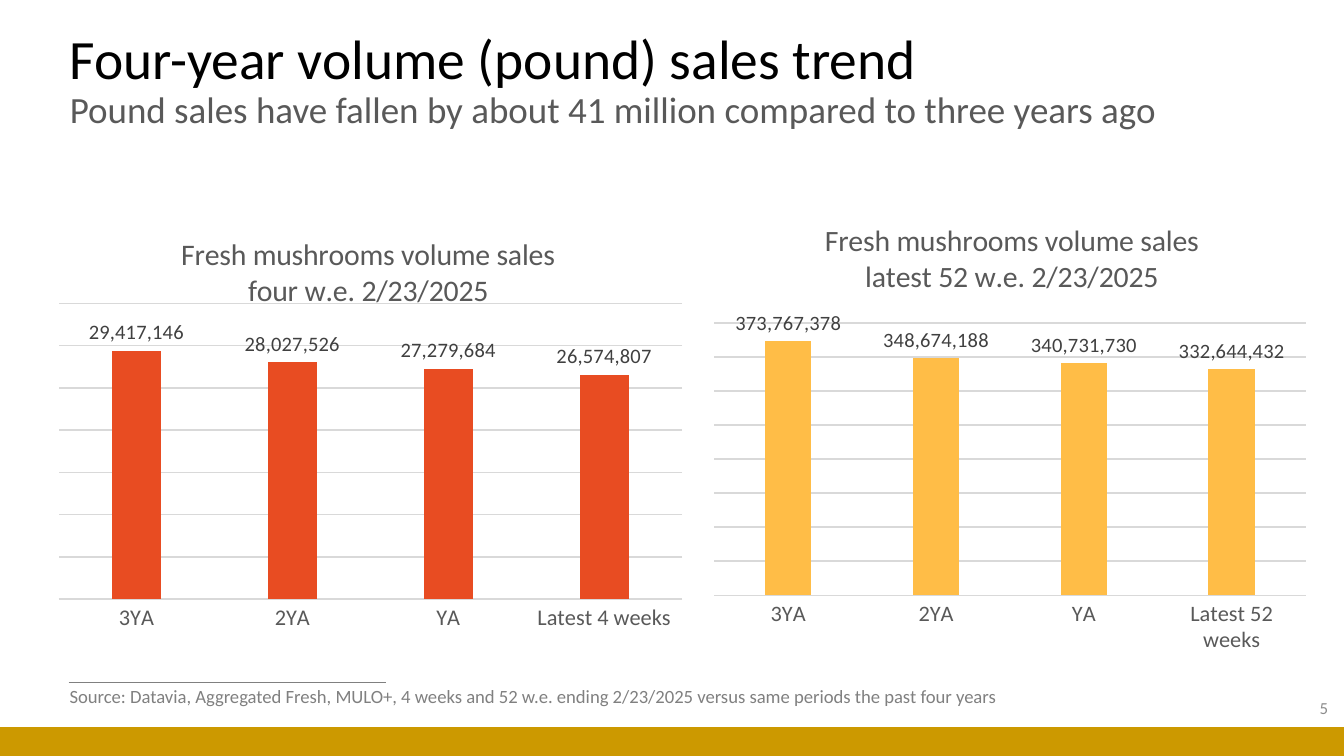
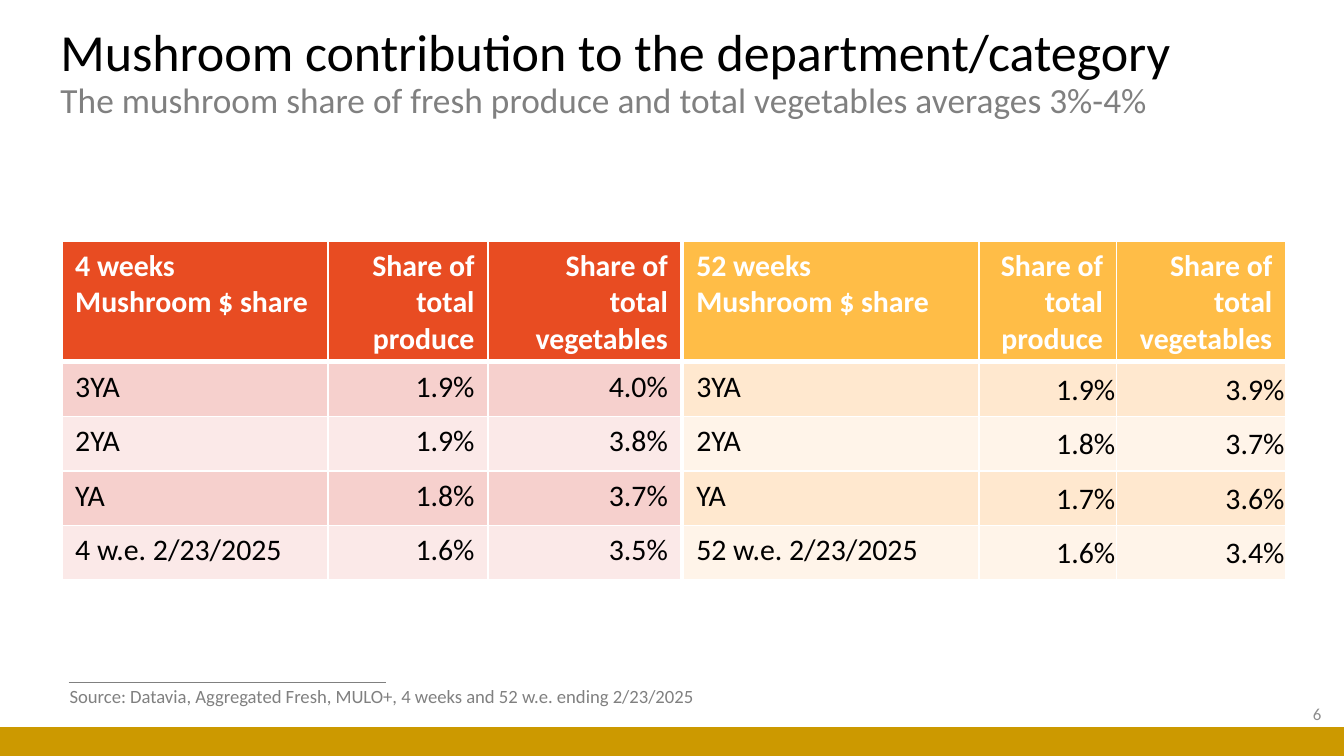
"""Build two slides on mushroom sales volume and share."""
from lxml import etree
from pptx import Presentation
from pptx.chart.data import CategoryChartData as Data
from pptx.dml.color import RGBColor
from pptx.enum.chart import XL_CHART_TYPE as Kind, XL_LABEL_POSITION as Spot, XL_TICK_MARK as Tick
from pptx.enum.shapes import MSO_CONNECTOR as Wire, MSO_SHAPE as Shape
from pptx.enum.text import MSO_ANCHOR as Anchor, MSO_AUTO_SIZE as Auto, PP_ALIGN as Align
from pptx.oxml.ns import qn
from pptx.util import Pt

FACE = "Calibri"
BLACK, WHITE, GOLD = "000000", "FFFFFF", "CC9900"
RED, AMBER = "E84C22", "FFBD47"
DARK, GREY, PALE, RULE = "404040", "808080", "8C8C8C", "D9D9D9"
SLATE = "595959"


def tint(hex):
    """Turn a hex string into a colour."""
    return RGBColor.from_string(hex)


def ink(font, size, color, bold=False):
    """Set face, size, colour and weight of a font."""
    font.name, font.size, font.bold = FACE, Pt(size), bold
    font.color.rgb = tint(color)


def style(par, size, color, bold=False, align=Align.LEFT):
    """Format the runs and line breaks of a paragraph."""
    par.alignment = align
    for run in par.runs:
        ink(run.font, size, color, bold)
    for gap in par._p.findall(qn("a:br")):
        etree.SubElement(gap, qn("a:rPr")).set("sz", str(round(size * 100)))


def place(node, index, **parts):
    """Give a chart part a fixed layout."""
    for old in node.findall(qn("c:layout")):
        node.remove(old)
    outer = etree.Element(qn("c:layout"))
    inner = etree.SubElement(outer, qn("c:manualLayout"))
    for key, val in parts.items():
        etree.SubElement(inner, qn("c:" + key)).set("val", str(val))
    node.insert(index, outer)


def edge(cell, **widths):
    """Draw white cell borders with the given widths."""
    props = cell._tc.get_or_add_tcPr()
    for side in "LRTB":
        line = etree.SubElement(props, qn("a:ln" + side), w=str(Pt(widths.get(side, 1))))
        fill = etree.SubElement(line, qn("a:solidFill"))
        etree.SubElement(fill, qn("a:srgbClr"), val=WHITE)


class Deck:
    """Hold the shared style and the current slide."""

    def __init__(self):
        """Start an empty wide deck."""
        self.file = Presentation()
        self.file.slide_width, self.file.slide_height = Pt(720), Pt(405)

    def page(self):
        """Add a slide with its footer rule and band."""
        self.slide = self.file.slides.add_slide(self.file.slide_layouts[5])
        self.shapes = self.slide.shapes
        rule = self.shapes.add_connector(Wire.STRAIGHT, Pt(36.8), Pt(365.6), Pt(206.8), Pt(365.6))
        rule.line.color.rgb, rule.line.width = tint(GREY), Pt(0.5)
        etree.SubElement(rule._element.spPr, qn("a:effectLst"))
        band = self.shapes.add_shape(Shape.RECTANGLE, 0, Pt(389.5), Pt(720), Pt(15.5))
        band.shadow.inherit = False
        band.fill.solid()
        band.fill.fore_color.rgb = tint(GOLD)
        band.line.fill.background()

    def title(self, box, head, sub, sizes, color):
        """Fill the title with a headline and a smaller second line."""
        shape = self.shapes.title
        shape.left, shape.top, shape.width, shape.height = map(Pt, box)
        frame = shape.text_frame
        frame.text = head + "\v" + sub
        frame.auto_size, frame.vertical_anchor = Auto.NONE, Anchor.MIDDLE
        par = frame.paragraphs[0]
        par.line_spacing = 0.9
        style(par, sizes[0], BLACK)
        ink(par.runs[1].font, sizes[1], color)

    def text(self, box, words, size, color, align=Align.LEFT):
        """Add a one-line text box."""
        frame = self.shapes.add_textbox(*map(Pt, box)).text_frame
        frame.text = words
        style(frame.paragraphs[0], size, color, align=align)
        return frame

    def source(self, words, width):
        """Add the source line."""
        frame = self.text((30.2, 363.6, width, 19.4), words, 10, GREY)
        frame.word_wrap, frame.auto_size = False, Auto.SHAPE_TO_FIT_TEXT

    def number(self, left, top, words):
        """Add the page number."""
        frame = self.text((left, top, 162, 21.6), words, 9, PALE, Align.RIGHT)
        frame.word_wrap, frame.vertical_anchor = True, Anchor.MIDDLE

    def chart(self, left, width, head, spot, plot, last, vals, color):
        """Add a column chart of four periods."""
        data = Data(number_format="#,##0")
        data.categories = ["3YA", "2YA", "YA", last]
        data.add_series("Series 1", vals)
        box = map(Pt, (left, 111.6, width, 238.3))
        chart = self.shapes.add_chart(Kind.COLUMN_CLUSTERED, *box, data).chart
        ink(chart.font, 10, BLACK)
        chart.has_legend = False
        title = chart.chart_title
        title.text_frame.text = head
        for par in title.text_frame.paragraphs:
            style(par, 16, SLATE, align=Align.CENTER)
        place(title._element, 1, xMode="edge", yMode="edge", x=spot[0], y=spot[1])
        place(chart._chartSpace.chart.plotArea, 0, layoutTarget="inner",
              xMode="edge", yMode="edge", x=0, y=plot[0], w=1, h=plot[1])
        cats, axis = chart.category_axis, chart.value_axis
        cats.major_tick_mark = cats.minor_tick_mark = Tick.NONE
        ink(cats.tick_labels.font, 12, SLATE)
        axis.visible, axis.minimum_scale = False, 0
        axis.has_major_gridlines = True
        for line in (cats.format.line, axis.major_gridlines.format.line):
            line.color.rgb, line.width = tint(RULE), Pt(0.75)
        bars = chart.plots[0]
        bars.gap_width, bars.overlap, bars.vary_by_categories = 219, -27, False
        fill = bars.series[0].format.fill
        fill.solid()
        fill.fore_color.rgb = tint(color)
        bars.has_data_labels = True
        tags = bars.data_labels
        tags.show_value, tags.position = True, Spot.OUTSIDE_END
        tags.number_format, tags.number_format_is_linked = "#,##0", False
        ink(tags.font, 11, DARK)

    def table(self, left, cols, rows, fills, tight=False):
        """Add a share table with a header and two row tints."""
        box = map(Pt, (left, 129.1, sum(cols), 181.2))
        grid = self.shapes.add_table(len(rows), len(cols), *box).table
        grid.horz_banding = False
        for col, width in zip(grid.columns, cols):
            col.width = Pt(width)
        for y, row in enumerate(rows):
            grid.rows[y].height = Pt(29.2 if y else 64.4)
            for x, words in enumerate(row):
                cell = grid.cell(y, x)
                cell.text = words
                style(cell.text_frame.paragraphs[0], 16, BLACK if y else WHITE,
                      not y, Align.RIGHT if x else Align.LEFT)
                if tight and x and y:
                    cell.margin_left = cell.margin_right = cell.margin_top = Pt(0.7)
                    cell.margin_bottom = 0
                    cell.vertical_anchor = Anchor.MIDDLE
                edge(cell, T=3 if y == 1 else 1, B=1 if y else 3)
                cell.fill.solid()
                cell.fill.fore_color.rgb = tint(fills[2 - y % 2 if y else 0])


def main():
    """Build and save both slides."""
    deck = Deck()
    note = "Source: Datavia, Aggregated Fresh, MULO+, 4 weeks and 52 w.e. ending 2/23/2025"

    deck.page()
    deck.title((30.2, 15.1, 619.2, 56.9), "Four-year volume (pound) sales trend",
               "Pound sales have fallen by about 41 million compared to three years ago",
               (29.7, 19.8), SLATE)
    deck.number(556.6, 368.6, "5")
    deck.source(note + " versus same periods the past four years", 521.3)
    deck.chart(31, 334.8, "Fresh mushrooms volume sales\nfour w.e. 2/23/2025",
               (0.19, 0.05), (0.214, 0.665), "Latest 4 weeks",
               (29417146, 28027526, 27279684, 26574807), RED)
    deck.chart(382.3, 317.5, "Fresh mushrooms volume sales\nlatest 52 w.e. 2/23/2025",
               (0.18, 0.02), (0.261, 0.619), "Latest 52 weeks",
               (373767378, 348674188, 340731730, 332644432), AMBER)

    deck.page()
    deck.title((25.2, 21.6, 630, 36), "Mushroom contribution to the department/category",
               "The mushroom share of fresh produce and total vegetables averages 3%-4%",
               (27.9, 18.9), GREY)
    deck.number(553, 371.5, "6")
    deck.source(note, 356.4)
    heads = ["Share of total produce", "Share of total vegetables"]
    deck.table(33.1, (142.6, 85.7, 103.6), [
        ["4 weeks\vMushroom $ share", *heads],
        ["3YA", "1.9%", "4.0%"],
        ["2YA", "1.9%", "3.8%"],
        ["YA", "1.8%", "3.7%"],
        ["4 w.e. 2/23/2025", "1.6%", "3.5%"],
    ], (RED, "F6D0CD", "FBE9E8"))
    deck.table(365.8, (158.6, 73.7, 90.7), [
        ["52 weeks\vMushroom $ share", *heads],
        ["3YA", "1.9%", "3.9%"],
        ["2YA", "1.8%", "3.7%"],
        ["YA", "1.7%", "3.6%"],
        ["52 w.e. 2/23/2025", "1.6%", "3.4%"],
    ], (AMBER, "FFE8CF", "FFF4E9"), tight=True)
    deck.file.save("out.pptx")


if __name__ == "__main__":
    main()
